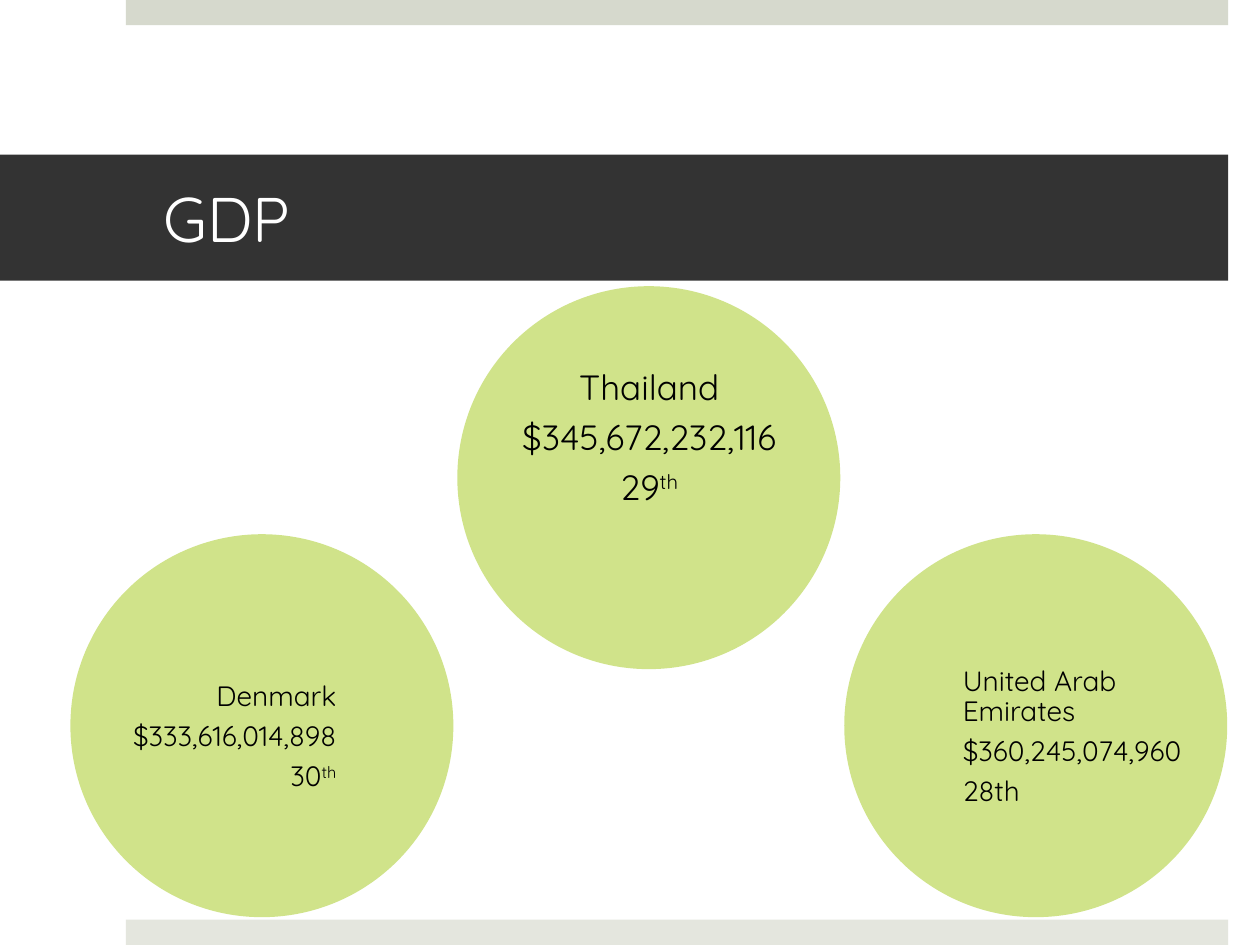
from dataclasses import dataclass

import lxml.etree
import pptx
import pptx.dml.color
import pptx.enum.shapes
import pptx.enum.text
import pptx.oxml.ns
import pptx.util
from pptx.util import Cm

Align = pptx.enum.text.PP_ALIGN
Preset = pptx.enum.shapes.MSO_SHAPE


@dataclass(frozen=True)
class Theme:
    font: str = "Quicksand"
    band: str = "333333"
    top_strip: str = "D6D9CD"
    bottom_strip: str = "E4E6DE"
    circle: str = "A2C816"
    circle_opacity: int = 50
    title_text: str = "FFFFFF"
    body_text: str = "000000"
    title_size: int = 36
    lead_size: int = 20
    side_size: int = 16


@dataclass(frozen=True)
class Country:
    lines: tuple[str, ...]
    column: int
    top: float
    text_box: tuple[float, float, float, float]  # left, top, width, height in cm
    alignment: Align
    size: int
    superscript: str = ""


THEME = Theme()
DIAMETER = 7.72
FIRST_LEFT = 1.42
COLUMN_PITCH = 7.8
UPPER_TOP, LOWER_TOP = 5.77, 10.77

COUNTRIES = (
    Country(("Thailand", "$345,672,232,116", "29"), 1, UPPER_TOP,
            (10.26, 7.11, 5.66, 3.48), Align.CENTER, THEME.lead_size, "th"),
    Country(("United Arab Emirates", "$360,245,074,960", "28th"), 2, LOWER_TOP,
            (19.41, 12.75, 4.65, 4.24), Align.LEFT, THEME.side_size),
    Country(("Denmark", "$333,616,014,898", "30"), 0, LOWER_TOP,
            (2.13, 12.75, 4.65, 4.24), Align.RIGHT, THEME.side_size, "th"),
)


def add_percentage(parent, tag: str, percent: int) -> None:
    """Append a DrawingML element that holds a percentage."""
    element = lxml.etree.SubElement(parent, pptx.oxml.ns.qn(tag))
    element.set("val", str(percent * 1000))


def add_filled(shapes, preset, left: float, top: float, width: float, height: float,
               color: str, opacity: int = 100):
    """Draw a borderless preset shape, measured in centimetres."""
    shape = shapes.add_shape(preset, Cm(left), Cm(top), Cm(width), Cm(height))
    shape.shadow.inherit = False
    shape.line.fill.background()
    shape.fill.solid()
    shape.fill.fore_color.rgb = pptx.dml.color.RGBColor.from_string(color)
    if opacity < 100:
        solid_fill = shape._element.spPr.find(pptx.oxml.ns.qn("a:solidFill"))
        add_percentage(solid_fill[0], "a:alpha", opacity)
    return shape


def set_space_after(paragraph, percent: int) -> None:
    """Set paragraph spacing relative to the type size."""
    paragraph.space_after = pptx.util.Pt(0)
    spacing = paragraph._p.pPr.find(pptx.oxml.ns.qn("a:spcAft"))
    spacing.remove(spacing[0])
    add_percentage(spacing, "a:spcPct", percent)


def write_text(shape, lines: tuple[str, ...], *, size: int, color: str,
               alignment=Align.LEFT, margins=(0, 0, 0, 0), line_spacing: float = 1.0,
               space_after: int = 0, superscript: str = "") -> None:
    """Write one paragraph per line; the superscript closes the last one."""
    frame = shape.text_frame
    frame.word_wrap = True
    frame.vertical_anchor = pptx.enum.text.MSO_ANCHOR.MIDDLE
    (frame.margin_left, frame.margin_top,
     frame.margin_right, frame.margin_bottom) = (Cm(margin) for margin in margins)
    for index, line in enumerate(lines):
        paragraph = frame.add_paragraph() if index else frame.paragraphs[0]
        paragraph.alignment = alignment
        paragraph.line_spacing = line_spacing
        if space_after:
            set_space_after(paragraph, space_after)
        paragraph.add_run().text = line
        if superscript and index == len(lines) - 1:
            raised = paragraph.add_run()
            raised.text = superscript
            raised._r.get_or_add_rPr().set("baseline", "30000")
        for run in paragraph.runs:
            run.font.name = THEME.font
            run.font.size = pptx.util.Pt(size)
            run.font.color.rgb = pptx.dml.color.RGBColor.from_string(color)


def add_country(shapes, country: Country) -> None:
    left = FIRST_LEFT + country.column * COLUMN_PITCH
    add_filled(shapes, Preset.OVAL, left, country.top, DIAMETER, DIAMETER,
               THEME.circle, THEME.circle_opacity)
    text_box = shapes.add_textbox(*(Cm(length) for length in country.text_box))
    write_text(text_box, country.lines, size=country.size, color=THEME.body_text,
               alignment=country.alignment, line_spacing=0.9, space_after=35,
               superscript=country.superscript)


def main() -> None:
    presentation = pptx.Presentation()
    presentation.slide_width, presentation.slide_height = Cm(25.4), Cm(19.05)
    slide = presentation.slides.add_slide(presentation.slide_layouts[6])

    # Edge strips
    for top, color in ((0, THEME.top_strip), (18.54, THEME.bottom_strip)):
        add_filled(slide.shapes, Preset.RECTANGLE, 2.54, top, 22.22, 0.51, color)

    # Title band
    band = add_filled(slide.shapes, Preset.RECTANGLE, 0, 3.12, 24.76, 2.54, THEME.band)
    write_text(band, ("GDP",), size=THEME.title_size, color=THEME.title_text,
               margins=(3.3, 0.13, 0.76, 0.13))

    # Country circles
    group = slide.shapes.add_group_shape()
    for country in COUNTRIES:
        add_country(group.shapes, country)

    presentation.save("out.pptx")


if __name__ == "__main__":
    main()
